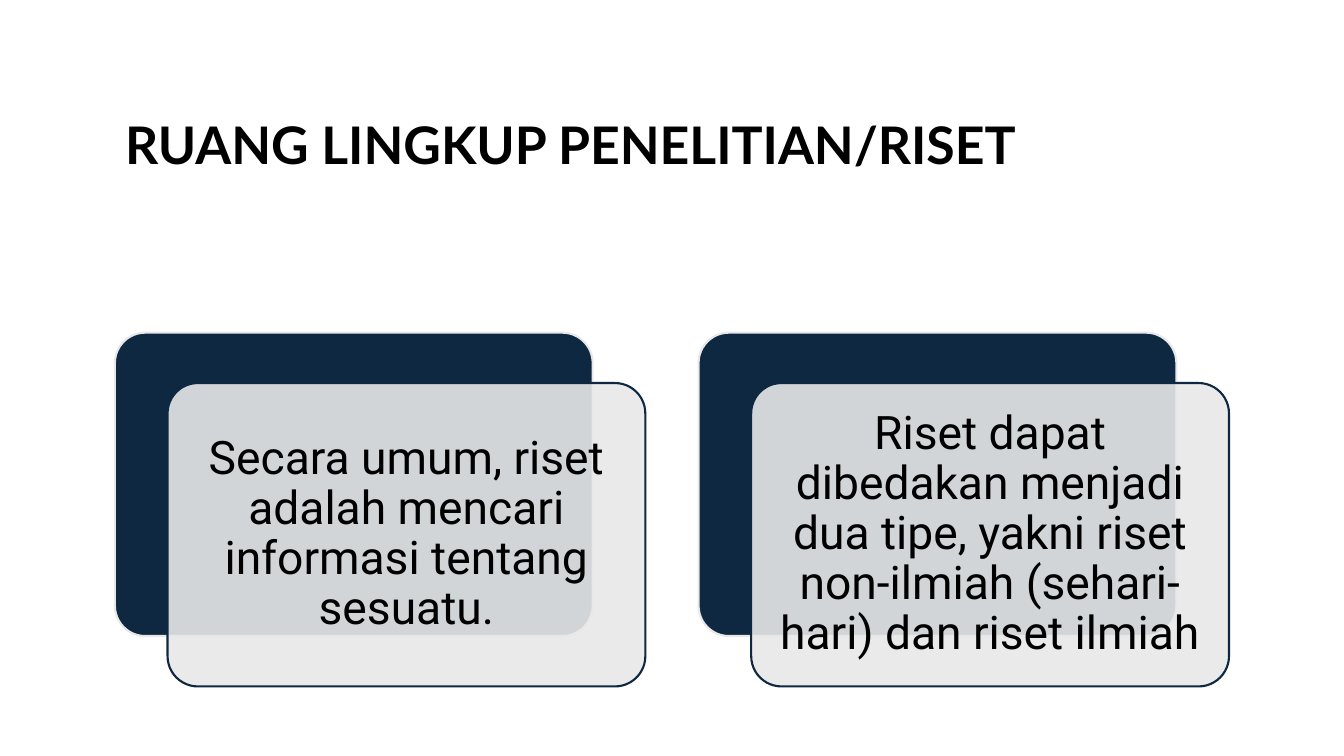
from lxml import etree
from pptx import Presentation
from pptx.dml.color import RGBColor
from pptx.enum.shapes import MSO_SHAPE
from pptx.enum.text import MSO_ANCHOR, MSO_AUTO_SIZE, PP_ALIGN
from pptx.oxml.ns import qn
from pptx.util import Pt

ROUNDED = MSO_SHAPE.ROUNDED_RECTANGLE
MIDDLE = MSO_ANCHOR.MIDDLE
NO_AUTOFIT = MSO_AUTO_SIZE.NONE
LEFT = PP_ALIGN.LEFT
CENTER = PP_ALIGN.CENTER

TITLE_ONLY = 5
CARD_WIDTH, CARD_HEIGHT = 341.3, 216.7
CARD_LEFT, CARD_TOP, CARD_STEP = 82.1, 237.6, 416.9
FRONT_SHIFT_X, FRONT_SHIFT_Y = 37.6, 36

CARD_TEXTS = [
    "Secara umum, riset adalah mencari informasi tentang sesuatu.",
    "Riset dapat dibedakan menjadi dua tipe, yakni riset non-ilmiah (sehari-hari) dan riset ilmiah",
]


def colour(value):
    return RGBColor.from_string(value)


class SlideBuilder:
    navy = "0E2841"
    grey = "E8E8E8"
    black = "000000"
    title_font = "Lato"
    body_font = "Roboto"

    def __init__(self, slide):
        self.slide = slide

    def add_text(self, shape, text, font, size, bold, alignment, insets):
        frame = shape.text_frame
        frame.word_wrap = True
        frame.auto_size = NO_AUTOFIT
        frame.vertical_anchor = MIDDLE
        frame.margin_left, frame.margin_top, frame.margin_right, frame.margin_bottom = map(Pt, insets)
        paragraph = frame.paragraphs[0]
        paragraph.alignment = alignment
        paragraph.line_spacing = 0.9
        run = paragraph.add_run()
        run.text = text
        run.font.name = font
        run.font.size = Pt(size)
        run.font.bold = bold
        run.font.color.rgb = colour(self.black)

    def title(self, text):
        shape = self.slide.shapes.title
        shape.left, shape.top, shape.width, shape.height = map(Pt, (82.1, 64.1, 801.4, 122.4))
        self.add_text(shape, text, self.title_font, 37, True, LEFT, (7.2, 3.6, 7.2, 43.6))

    def panel(self, left, top, fill, line, opacity=100):
        shape = self.slide.shapes.add_shape(ROUNDED, *map(Pt, (left, top, CARD_WIDTH, CARD_HEIGHT)))
        shape.adjustments[0] = 0.1
        shape.shadow.inherit = False
        shape.fill.solid()
        shape.fill.fore_color.rgb = colour(fill)
        shape.line.color.rgb = colour(line)
        shape.line.width = Pt(1.5)
        if opacity < 100:
            fill_colour = shape.element.spPr.find(qn("a:solidFill"))[0]
            etree.SubElement(fill_colour, qn("a:alpha"), val=str(opacity * 1000))
        return shape

    def card(self, left, top, text):
        self.panel(left, top, self.navy, self.grey)
        front = self.panel(left + FRONT_SHIFT_X, top + FRONT_SHIFT_Y, self.grey, self.navy, 90)
        self.add_text(front, text, self.body_font, 33, False, CENTER, (10, 10, 10, 10))


def main():
    presentation = Presentation()
    presentation.slide_width = Pt(960)
    presentation.slide_height = Pt(540)
    slide = presentation.slides.add_slide(presentation.slide_layouts[TITLE_ONLY])
    builder = SlideBuilder(slide)
    builder.title("RUANG LINGKUP PENELITIAN/RISET")
    for index, text in enumerate(CARD_TEXTS):
        builder.card(CARD_LEFT + index * CARD_STEP, CARD_TOP, text)
    presentation.save("out.pptx")


if __name__ == "__main__":
    main()
